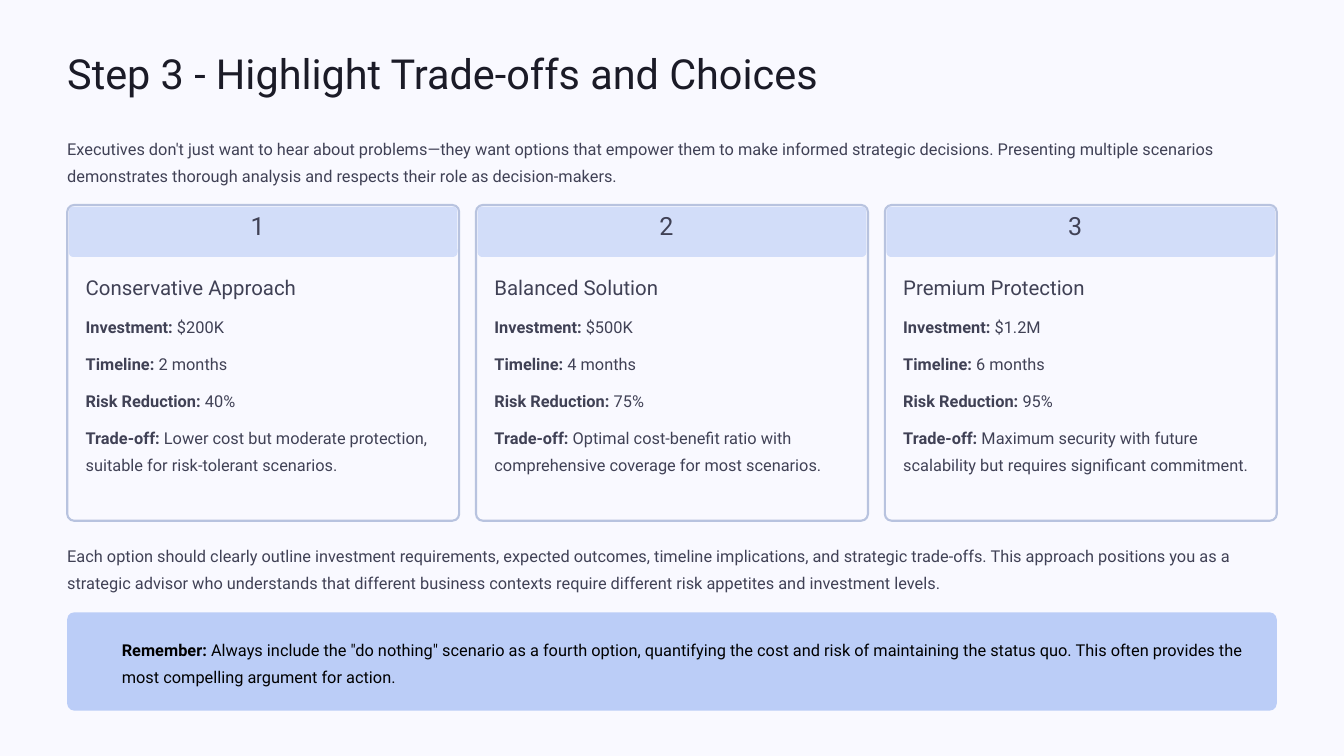
from pptx import Presentation
from pptx.dml.color import RGBColor
from pptx.enum.shapes import MSO_SHAPE
from pptx.enum.text import MSO_ANCHOR, MSO_AUTO_SIZE, PP_ALIGN
from pptx.util import Inches, Pt

ROUNDED = MSO_SHAPE.ROUNDED_RECTANGLE
TOP = MSO_ANCHOR.TOP
NO_FIT = MSO_AUTO_SIZE.NONE
LEFT = PP_ALIGN.LEFT
TITLE_ONLY = 5

WIDTH, HEIGHT = 16, 9
MARGIN = 0.8
CONTENT = WIDTH - 2 * MARGIN
CARD_GAP = 0.2
FACT_STEP = 0.44

PAPER, BORDER, BAND, CALLOUT = "F9F9FF", "B8C3DF", "D2DDF9", "BBCDF7"
INK, TEXT, BLACK = "1B1B27", "404155", "000000"

TITLE_STYLE = {"size": 35.5, "color": INK, "leading": 44.5}
NUMBER_STYLE = {"size": 21.5, "color": TEXT, "leading": 21.5}
HEADING_STYLE = {"size": 17.5, "color": TEXT, "leading": 22}
BODY_STYLE = {"size": 14, "color": TEXT, "leading": 23}
CALLOUT_STYLE = {**BODY_STYLE, "color": BLACK}

TITLE = "Step 3 - Highlight Trade-offs and Choices"
INTRO = (
    "Executives don't just want to hear about problems—they want options that empower "
    "them to make informed strategic decisions. Presenting multiple scenarios "
    "demonstrates thorough analysis and respects their role as decision-makers."
)
SUMMARY = (
    "Each option should clearly outline investment requirements, expected outcomes, "
    "timeline implications, and strategic trade-offs. This approach positions you as a "
    "strategic advisor who understands that different business contexts require "
    "different risk appetites and investment levels."
)
REMINDER = (
    'Always include the "do nothing" scenario as a fourth option, quantifying the cost '
    "and risk of maintaining the status quo. This often provides the most compelling "
    "argument for action."
)
FACT_LABELS = ["Investment:", "Timeline:", "Risk Reduction:", "Trade-off:"]
OPTIONS = [
    ("Conservative Approach", [
        "$200K", "2 months", "40%",
        "Lower cost but moderate protection, suitable for risk-tolerant scenarios.",
    ]),
    ("Balanced Solution", [
        "$500K", "4 months", "75%",
        "Optimal cost-benefit ratio with comprehensive coverage for most scenarios.",
    ]),
    ("Premium Protection", [
        "$1.2M", "6 months", "95%",
        "Maximum security with future scalability but requires significant commitment.",
    ]),
]


def rgb(color):
    return RGBColor.from_string(color)


def set_attributes(target, values):
    for name, value in values.items():
        setattr(target, name, value)


def write_text(shape, text, style, label="", wrap=True):
    """Fill the shape with one paragraph, led by a bold label if given."""
    frame = shape.text_frame
    set_attributes(frame, {
        "margin_left": 0, "margin_right": 0, "margin_top": 0, "margin_bottom": 0,
        "vertical_anchor": TOP, "auto_size": NO_FIT, "word_wrap": wrap,
    })
    paragraph = frame.paragraphs[0]
    set_attributes(paragraph, {"alignment": LEFT, "line_spacing": Pt(style["leading"])})
    parts = [(label, True), (f" {text}", False)] if label else [(text, False)]
    for content, bold in parts:
        run = paragraph.add_run()
        run.text = content
        set_attributes(run.font, {"name": "Roboto", "size": Pt(style["size"]), "bold": bold})
        run.font.color.rgb = rgb(style["color"])


def add_text(slide, box, text, style, label="", wrap=True):
    shape = slide.shapes.add_textbox(*map(Inches, box))
    write_text(shape, text, style, label, wrap)


def add_panel(slide, box, fill, rounding, border=None):
    shape = slide.shapes.add_shape(ROUNDED, *map(Inches, box))
    shape.shadow.inherit = False
    shape.adjustments[0] = rounding
    shape.fill.solid()
    shape.fill.fore_color.rgb = rgb(fill)
    if border:
        shape.line.color.rgb = rgb(border)
        shape.line.width = Pt(1.8)
    else:
        shape.line.fill.background()


def place_title(slide, box):
    title = slide.shapes.title
    positions = zip(("left", "top", "width", "height"), map(Inches, box))
    set_attributes(title, dict(positions))
    write_text(title, TITLE, TITLE_STYLE, wrap=False)


def add_option_card(slide, box, number, heading, facts):
    left, top, width, height = box
    add_panel(slide, box, PAPER, 0.022, BORDER)
    add_panel(slide, (left + 0.02, top + 0.02, width - 0.04, 0.6), BAND, 0.09)
    number_box = (left + width / 2 - 0.15, top + 0.13, 0.3, 0.37)
    add_text(slide, number_box, str(number), NUMBER_STYLE, wrap=False)

    inner_left, inner_width = left + 0.22, width - 0.44
    heading_box = (inner_left, top + 0.82, inner_width, 0.31)
    add_text(slide, heading_box, heading, HEADING_STYLE, wrap=False)
    last = len(facts) - 1
    for row, (label, fact) in enumerate(zip(FACT_LABELS, facts)):
        fact_height = 0.96 if row == last else 0.32
        fact_box = (inner_left, top + 1.25 + row * FACT_STEP, inner_width, fact_height)
        add_text(slide, fact_box, fact, BODY_STYLE, label, wrap=row == last)


def add_option_row(slide, box):
    left, top, width, height = box
    count = len(OPTIONS)
    card_width = (width - (count - 1) * CARD_GAP) / count
    for column, (heading, facts) in enumerate(OPTIONS):
        card_left = left + column * (card_width + CARD_GAP)
        card_box = (card_left, top, card_width, height)
        add_option_card(slide, card_box, column + 1, heading, facts)


def add_callout(slide, box):
    left, top, width, height = box
    add_panel(slide, box, CALLOUT, 0.072)
    text_box = (left + 0.65, top + 0.25, width - 0.85, 0.64)
    add_text(slide, text_box, REMINDER, CALLOUT_STYLE, "Remember:")


def build_slide(presentation):
    slide = presentation.slides.add_slide(presentation.slide_layouts[TITLE_ONLY])
    background = slide.background.fill
    background.solid()
    background.fore_color.rgb = rgb(PAPER)

    place_title(slide, (MARGIN, 0.55, 10.14, 0.62))
    add_text(slide, (MARGIN, 1.57, CONTENT, 0.64), INTRO, BODY_STYLE)
    add_option_row(slide, (MARGIN, 2.44, CONTENT, 3.76))
    add_text(slide, (MARGIN, 6.42, CONTENT, 0.64), SUMMARY, BODY_STYLE)
    add_callout(slide, (MARGIN, 7.29, CONTENT, 1.17))


def main():
    presentation = Presentation()
    presentation.slide_width = Inches(WIDTH)
    presentation.slide_height = Inches(HEIGHT)
    build_slide(presentation)
    presentation.save("out.pptx")


if __name__ == "__main__":
    main()
